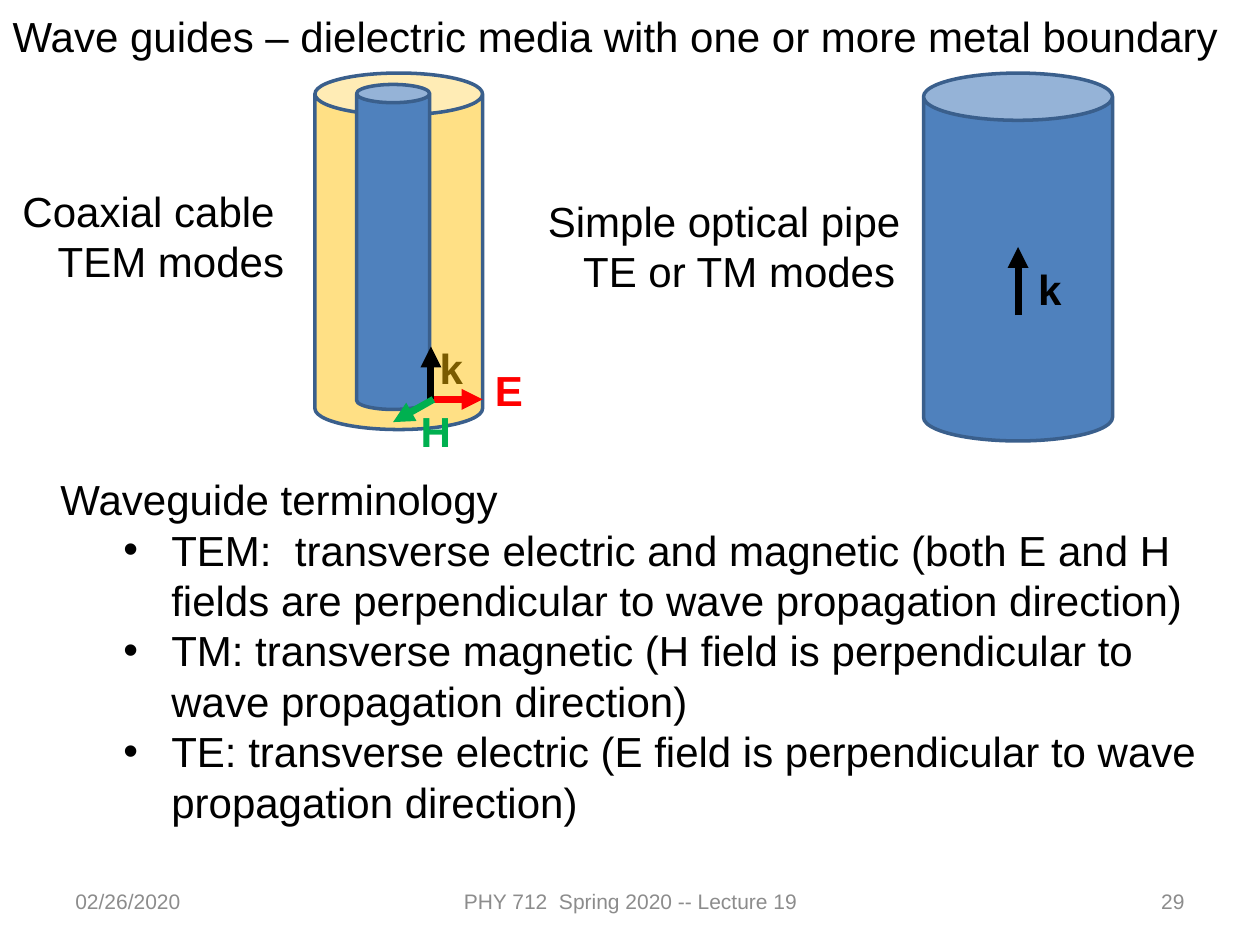
"""Build the lecture slide on coaxial and optical-pipe wave guides."""
from lxml import etree
from pptx import Presentation
from pptx.dml.color import RGBColor
from pptx.enum.shapes import MSO_CONNECTOR, MSO_SHAPE
from pptx.enum.text import MSO_ANCHOR, MSO_AUTO_SIZE, PP_ALIGN
from pptx.oxml.ns import qn
from pptx.util import Inches, Pt

LEFT, CENTER, RIGHT = PP_ALIGN.LEFT, PP_ALIGN.CENTER, PP_ALIGN.RIGHT
TOP, MIDDLE = MSO_ANCHOR.TOP, MSO_ANCHOR.MIDDLE
CAN, STRAIGHT = MSO_SHAPE.CAN, MSO_CONNECTOR.STRAIGHT
COLORS = {"black": "000000", "gray": "8C8C8C", "red": "FF0000", "green": "00B050",
          "blue": "4F81BD", "outline": "3A5F8C", "gold": "FFC000"}


def rgb(name):
    return RGBColor.from_string(COLORS[name])


def write(sp, at, *lines, size=24, color="black", bold=False, align=LEFT,
          anchor=TOP, wrap=True, bullets=False, indent=0):
    sp.left, sp.top, sp.width, sp.height = [Inches(v) for v in at]
    tf = sp.text_frame
    tf.auto_size = MSO_AUTO_SIZE.NONE
    tf.word_wrap, tf.vertical_anchor = wrap, anchor
    for i, line in enumerate(lines):
        p = tf.add_paragraph() if i else tf.paragraphs[0]
        p.alignment, p.line_spacing = align, 1.0
        p.space_before = p.space_after = Pt(0)
        r = p.add_run()
        r.text = line
        r.font.name, r.font.size, r.font.bold = "Arial", Pt(size), bold
        r.font.color.rgb = rgb(color)
        pPr = p._p.get_or_add_pPr()
        pPr.set("marL", str(Inches(indent if i else 0)))
        pPr.set("indent", str(Inches(-0.38 if bullets and i else 0)))
        if bullets and i:
            p.level = 1
            etree.SubElement(pPr, qn("a:buFont")).set("typeface", "Arial")
            etree.SubElement(pPr, qn("a:buChar")).set("char", "•")
        elif bullets:
            etree.SubElement(pPr, qn("a:buNone"))


prs = Presentation()
prs.slide_width, prs.slide_height = Inches(10), Inches(7.5)
s = prs.slides.add_slide(prs.slide_layouts[1])

write(s.shapes.title, (0, 0.03, 9.83, 0.5),
      "Wave guides – dielectric media with one or more metal boundary")
write(s.placeholders[1], (0.38, 3.71, 9.25, 2.93),
      "Waveguide terminology",
      "TEM:  transverse electric and magnetic (both E and H fields are "
      "perpendicular to wave propagation direction)",
      "TM: transverse magnetic (H field is perpendicular to wave propagation direction)",
      "TE: transverse electric (E field is perpendicular to wave propagation direction)",
      bullets=True, indent=0.88)

coax_k = s.shapes.add_textbox(0, 0, 0, 0)
write(coax_k, (3.39, 2.67, 0.39, 0.5), "k", bold=True, wrap=False)

for at, fill, opacity in [((2.5, 0.58, 1.33, 2.83), "gold", 48),
                          ((2.83, 0.67, 0.58, 2.58), "blue", 100),
                          ((7.33, 0.58, 1.5, 2.92), "blue", 100)]:
    can = s.shapes.add_shape(CAN, *[Inches(v) for v in at])
    can.shadow.inherit = False
    can.fill.solid()
    can.fill.fore_color.rgb = rgb(fill)
    can.line.color.rgb, can.line.width = rgb("outline"), Pt(2)
    if opacity < 100:
        clr = can._element.spPr.find(qn("a:solidFill")).find(qn("a:srgbClr"))
        etree.SubElement(clr, qn("a:alpha")).set("val", str(opacity * 1000))

for at, lines in [((0.08, 1.42, 2.58, 0.91), ("Coaxial cable", "TEM modes")),
                  ((4.25, 1.5, 3.58, 0.91), ("Simple optical pipe", "TE or TM modes"))]:
    write(s.shapes.add_textbox(0, 0, 0, 0), at, *lines, indent=0.28)

for ends, color in [((3.42, 3.17, 3.83, 3.17), "red"),
                    ((3.42, 3.17, 3.42, 2.75), "black"),
                    ((3.44, 3.17, 3.12, 3.35), "green"),
                    ((8.08, 2.5, 8.08, 1.96), "black")]:
    arrow = s.shapes.add_connector(STRAIGHT, *[Inches(v) for v in ends])
    arrow.line.color.rgb, arrow.line.width = rgb(color), Pt(4)
    etree.SubElement(arrow.line._get_or_add_ln(), qn("a:tailEnd")).set("type", "triangle")
    etree.SubElement(arrow._element.spPr, qn("a:effectLst"))

for at, label, color in [((3.83, 2.84, 0.43, 0.5), "E", "red"),
                         ((3.24, 3.17, 0.45, 0.5), "H", "green"),
                         ((8.14, 2.04, 0.39, 0.5), "k", "black")]:
    write(s.shapes.add_textbox(0, 0, 0, 0), at, label, color=color, bold=True, wrap=False)

for left, width, text, align in [(0.5, 2.33, "02/26/2020", LEFT),
                                 (3.42, 3.17, "PHY 712  Spring 2020 -- Lecture 19", CENTER),
                                 (7.17, 2.33, "29", RIGHT)]:
    write(s.shapes.add_textbox(0, 0, 0, 0), (left, 6.95, width, 0.4), text,
          size=12, color="gray", align=align, anchor=MIDDLE)

prs.save("out.pptx")
